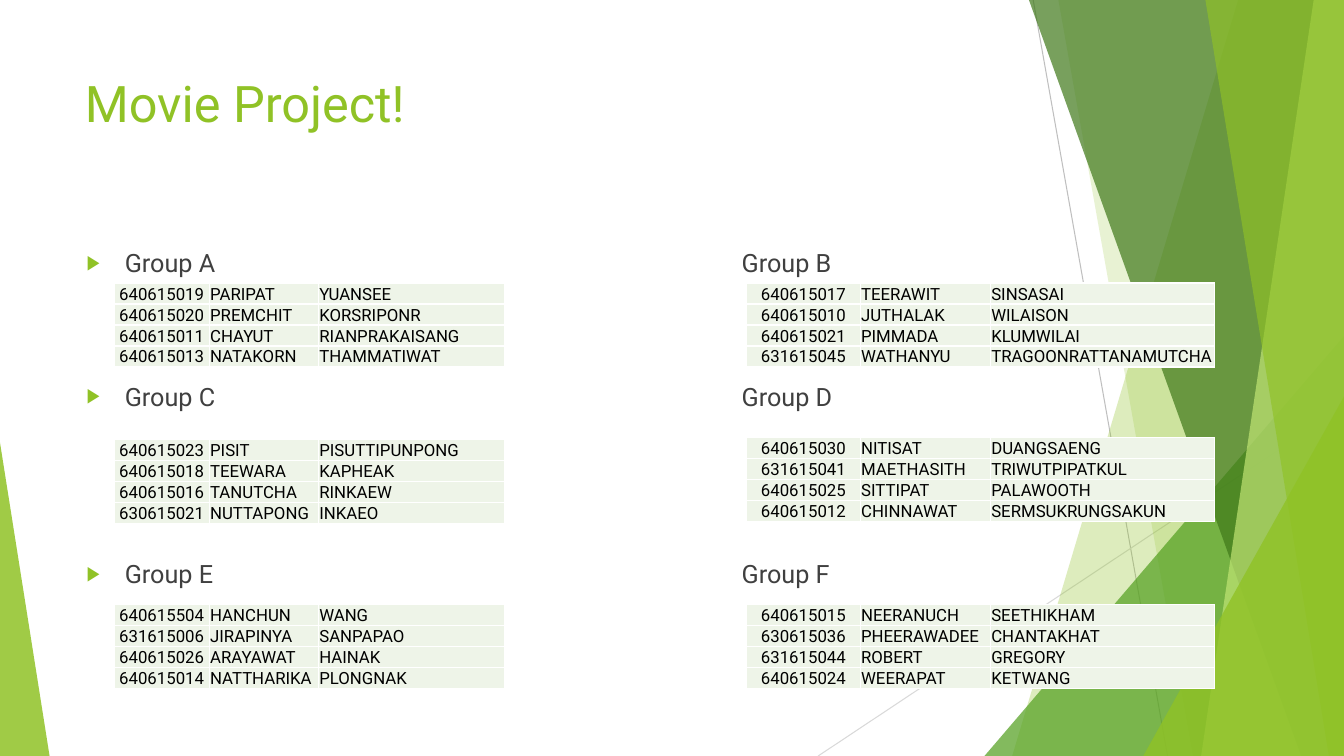
from dataclasses import dataclass

from lxml.etree import SubElement
from pptx import Presentation
from pptx.dml.color import RGBColor
from pptx.enum.shapes import MSO_CONNECTOR, MSO_SHAPE
from pptx.enum.text import MSO_ANCHOR, MSO_AUTO_SIZE, PP_ALIGN
from pptx.oxml.ns import qn
from pptx.util import Inches, Pt


@dataclass(frozen=True)
class Theme:
    font: str = "Roboto"
    lime: str = "90C226"
    pale_lime: str = "C0E474"
    green: str = "54A021"
    forest: str = "3F7819"
    heading: str = "404040"
    cell_text: str = "000000"
    cell_fill: str = "EEF4E8"
    cell_border: str = "FFFFFF"
    grey: str = "BFBFBF"
    light_grey: str = "D9D9D9"
    title_size: int = 36
    heading_size: int = 18
    cell_size: int = 12


THEME = Theme()
COLUMNS, ROWS = 160, 90  # square grid cells, twelve to the inch
TABLE_ROW = 2.5
HEADING_GAPS = (0, 74, 105.3)  # points before each heading

# Each side: heading left and width, bullets, table left, column widths, groups
# Each group: name, table top, members
SIDES = [
    (9.1, 60, True, 13.6, (11.3, 13, 22.2), [
        ("Group A", 33.7, [("640615019", "PARIPAT", "YUANSEE"),
                           ("640615020", "PREMCHIT", "KORSRIPONR"),
                           ("640615011", "CHAYUT", "RIANPRAKAISANG"),
                           ("640615013", "NATAKORN", "THAMMATIWAT")]),
        ("Group C", 52.3, [("640615023", "PISIT", "PISUTTIPUNPONG"),
                           ("640615018", "TEEWARA", "KAPHEAK"),
                           ("640615016", "TANUTCHA", "RINKAEW"),
                           ("630615021", "NUTTAPONG", "INKAEO")]),
        ("Group E", 72, [("640615504", "HANCHUN", "WANG"),
                         ("631615006", "JIRAPINYA", "SANPAPAO"),
                         ("640615026", "ARAYAWAT", "HAINAK"),
                         ("640615014", "NATTHARIKA", "PLONGNAK")]),
    ]),
    (87.1, 68, False, 88.9, (13.5, 15.5, 26.7), [
        ("Group B", 33.7, [("640615017", "TEERAWIT", "SINSASAI"),
                           ("640615010", "JUTHALAK", "WILAISON"),
                           ("640615021", "PIMMADA", "KLUMWILAI"),
                           ("631615045", "WATHANYU", "TRAGOONRATTANAMUTCHA")]),
        ("Group D", 52.1, [("640615030", "NITISAT", "DUANGSAENG"),
                           ("631615041", "MAETHASITH", "TRIWUTPIPATKUL"),
                           ("640615025", "SITTIPAT", "PALAWOOTH"),
                           ("640615012", "CHINNAWAT", "SERMSUKRUNGSAKUN")]),
        ("Group F", 72, [("640615015", "NEERANUCH", "SEETHIKHAM"),
                         ("630615036", "PHEERAWADEE", "CHANTAKHAT"),
                         ("631615044", "ROBERT", "GREGORY"),
                         ("640615024", "WEERAPAT", "KETWANG")]),
    ]),
]


def grid(cells):
    return Inches(cells / 12)


def write(para, text, size, color, align=PP_ALIGN.LEFT, before=0):
    para.alignment = align
    para.space_before = Pt(before)
    span = para.add_run()
    span.text = text
    span.font.name = THEME.font
    span.font.size = Pt(size)
    span.font.color.rgb = RGBColor.from_string(color)


def paint(shape, color, opacity):
    shape.shadow.inherit = False
    shape.line.fill.background()
    shape.fill.solid()
    shape.fill.fore_color.rgb = RGBColor.from_string(color)
    tint = next(shape.element.spPr.iter(qn("a:srgbClr")))
    SubElement(tint, qn("a:alpha"), val=str(opacity * 1000))


def add_line(page, start, end, color):
    points = [grid(value) for value in (*start, *end)]
    line = page.shapes.add_connector(MSO_CONNECTOR.STRAIGHT, *points)
    line.line.color.rgb = RGBColor.from_string(color)
    line.line.width = Pt(0.75)
    SubElement(line.element.spPr, qn("a:effectLst"))


def add_panel(page, top_left, bottom_left, color, opacity):
    """Slanted band that reaches the right edge of the slide."""
    builder = page.shapes.build_freeform(grid(top_left), 0)
    corners = [(COLUMNS, 0), (COLUMNS, ROWS), (bottom_left, ROWS)]
    builder.add_line_segments([(grid(x), grid(y)) for x, y in corners])
    paint(builder.convert_to_shape(), color, opacity)


def add_triangle(page, left, top, width, apex, color, opacity):
    """Triangle that stands on the bottom edge of the slide."""
    shape = page.shapes.add_shape(MSO_SHAPE.ISOSCELES_TRIANGLE, grid(left), grid(top),
                                  grid(width), grid(ROWS - top))
    shape.adjustments[0] = apex
    paint(shape, color, opacity)


def add_decoration(page):
    add_line(page, (123, 0), (139, ROWS), THEME.grey)
    add_line(page, (COLUMNS, 48.4), (97.4, ROWS), THEME.light_grey)
    add_panel(page, 147.4, 120.5, THEME.lime, 30)
    add_panel(page, 126, 142, THEME.lime, 20)
    add_triangle(page, 117.2, 40, 42.8, 1, THEME.green, 72)
    add_panel(page, 122.5, 154.9, THEME.forest, 70)
    add_panel(page, 156.4, 143, THEME.pale_lime, 70)
    add_panel(page, 143.5, 158.2, THEME.lime, 65)
    add_triangle(page, 136.1, 47.2, 23.9, 1, THEME.lime, 80)
    add_triangle(page, 0, 52.7, 5.9, 0, THEME.lime, 85)


def place(box, left, top, width, height):
    """Move a placeholder, bring it to the front and return its text frame."""
    box.left, box.top, box.width, box.height = map(grid, (left, top, width, height))
    box.element.getparent().append(box.element)
    frame = box.text_frame
    frame.word_wrap = True
    frame.auto_size = MSO_AUTO_SIZE.NONE
    frame.vertical_anchor = MSO_ANCHOR.TOP
    return frame


def set_bullet(para, shown):
    props = para._p.get_or_add_pPr()
    indent = Inches(0.38) if shown else 0
    props.set("marL", str(indent))
    props.set("indent", str(-indent))
    if shown:
        color = SubElement(props, qn("a:buClr"))
        SubElement(color, qn("a:srgbClr"), val=THEME.lime)
        SubElement(props, qn("a:buSzPct"), val="80000")
        SubElement(props, qn("a:buChar"), char="▶")
    else:
        SubElement(props, qn("a:buNone"))


def add_headings(box, left, width, names, bullets):
    frame = place(box, left, 28.8, width, 50.9)
    for index, (name, gap) in enumerate(zip(names, HEADING_GAPS)):
        para = frame.add_paragraph() if index else frame.paragraphs[0]
        write(para, name, THEME.heading_size, THEME.heading, before=gap)
        set_bullet(para, bullets)


def format_cell(cell, text, align):
    cell.margin_left = cell.margin_right = cell.margin_top = Inches(0.01)
    cell.margin_bottom = 0
    cell.vertical_anchor = MSO_ANCHOR.BOTTOM
    write(cell.text_frame.paragraphs[0], text, THEME.cell_size, THEME.cell_text, align)
    props = cell._tc.get_or_add_tcPr()
    for side in ("lnL", "lnR", "lnT", "lnB"):
        border = SubElement(props, qn(f"a:{side}"), w=str(Pt(1)))
        fill = SubElement(border, qn("a:solidFill"))
        SubElement(fill, qn("a:srgbClr"), val=THEME.cell_border)
    cell.fill.solid()
    cell.fill.fore_color.rgb = RGBColor.from_string(THEME.cell_fill)


def add_members(page, left, top, widths, members):
    table = page.shapes.add_table(len(members), len(widths), grid(left), grid(top),
                                  grid(sum(widths)), grid(TABLE_ROW * len(members))).table
    table.first_row = table.horz_banding = False
    for column, width in zip(table.columns, widths):
        column.width = grid(width)
    for row, member in zip(table.rows, members):
        row.height = grid(TABLE_ROW)
        for index, (cell, text) in enumerate(zip(row.cells, member)):
            format_cell(cell, text, PP_ALIGN.LEFT if index else PP_ALIGN.CENTER)


def main():
    deck = Presentation()
    deck.slide_width, deck.slide_height = grid(COLUMNS), grid(ROWS)
    page = deck.slides.add_slide(deck.slide_layouts.get_by_name("Two Content"))
    title, *bodies = list(page.placeholders)
    add_decoration(page)

    # Title
    frame = place(title, 8.9, 8, 112.8, 17.3)
    write(frame.paragraphs[0], "Movie Project!", THEME.title_size, THEME.lime)

    # Group headings, then the member tables above them
    for box, (left, width, bullets, _, _, groups) in zip(bodies, SIDES):
        add_headings(box, left, width, [name for name, _, _ in groups], bullets)
    for _, _, _, left, widths, groups in SIDES:
        for _, top, members in groups:
            add_members(page, left, top, widths, members)

    deck.save("out.pptx")


if __name__ == "__main__":
    main()
